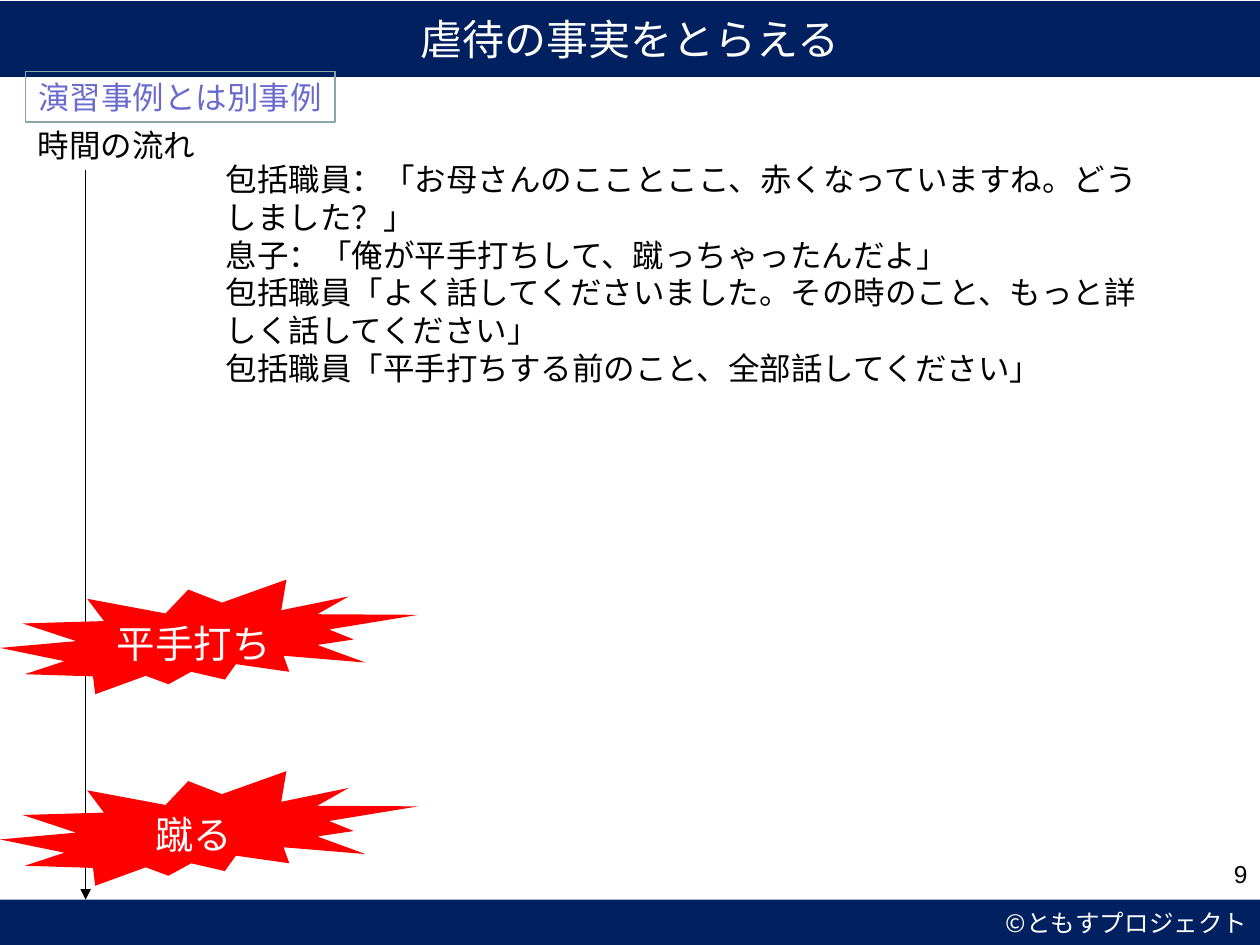
from dataclasses import dataclass

from lxml import etree
from pptx import Presentation
from pptx.dml.color import RGBColor
from pptx.enum.shapes import MSO_CONNECTOR, MSO_SHAPE
from pptx.enum.text import MSO_ANCHOR, MSO_AUTO_SIZE, PP_ALIGN
from pptx.oxml.ns import qn
from pptx.util import Inches, Pt

LEFT, MID, RIGHT = PP_ALIGN.LEFT, PP_ALIGN.CENTER, PP_ALIGN.RIGHT
TOP, CENTER = MSO_ANCHOR.TOP, MSO_ANCHOR.MIDDLE
RECT, BURST = MSO_SHAPE.RECTANGLE, MSO_SHAPE.EXPLOSION2
STRAIGHT = MSO_CONNECTOR.STRAIGHT
FIXED = MSO_AUTO_SIZE.NONE
COLS, ROWS = 100, 75


@dataclass
class Theme:
    navy: str = "002060"
    red: str = "FF0000"
    white: str = "FFFFFF"
    black: str = "000000"
    violet: str = "6B6BCF"
    frame: str = "8AA6A8"
    head: int = 24
    event: int = 22
    text: int = 18
    small: int = 14
    hair: float = 0.75
    pitch: float = 1.2
    asian: str = "Noto Sans CJK JP"
    latin: str = "Arial"
    label: str = "Calibri"


class Page:
    def __init__(self, deck, theme):
        self.theme = theme
        self.slide = deck.slides.add_slide(deck.slide_layouts[1])
        self.col = deck.slide_width / COLS
        self.row = deck.slide_height / ROWS

    def place(self, x, y, w, h):
        return (round(x * self.col), round(y * self.row),
                round(w * self.col), round(h * self.row))

    def move(self, shape, box):
        shape.left, shape.top, shape.width, shape.height = self.place(*box)

    def style(self, shape, lines, size, color, align=LEFT, anchor=TOP, font=None):
        """Set the lines of a shape and format them."""
        frame = shape.text_frame
        frame.text = "\n".join(lines)
        frame.word_wrap = True
        frame.auto_size = FIXED
        frame.vertical_anchor = anchor
        for para in frame.paragraphs:
            para.alignment = align
            para.space_before = Pt(0)
            para.line_spacing = Pt(size * self.theme.pitch)
            for run in para.runs:
                run.font.size = Pt(size)
                run.font.name = font or self.theme.asian
                run.font.color.rgb = RGBColor.from_string(color)
                east = etree.SubElement(run.font._element, qn("a:ea"))
                east.set("typeface", self.theme.asian)

    def paint(self, shape, fill):
        shape.fill.solid()
        shape.fill.fore_color.rgb = RGBColor.from_string(fill)
        shape.line.fill.background()

    def title(self, box, text):
        shape = self.slide.shapes.title
        self.move(shape, box)
        self.paint(shape, self.theme.navy)
        self.style(shape, [text], self.theme.head, self.theme.white, MID, CENTER)

    def body(self, box, lines):
        shape = self.slide.placeholders[1]
        self.move(shape, box)
        self.style(shape, lines, self.theme.text, self.theme.black)
        for para in shape.text_frame.paragraphs:
            props = para._p.get_or_add_pPr()
            props.set("marL", "0")
            props.set("indent", "0")
            etree.SubElement(props, qn("a:buNone"))

    def text(self, box, text, size, align=LEFT, font=None):
        shape = self.slide.shapes.add_textbox(*self.place(*box))
        self.style(shape, [text], size, self.theme.black, align, font=font)

    def shape(self, kind, box, text, size, color, fill=None, line=None,
              align=MID, anchor=TOP, font=None):
        shape = self.slide.shapes.add_shape(kind, *self.place(*box))
        shape.shadow.inherit = False
        if fill:
            self.paint(shape, fill)
        else:
            shape.fill.background()
        if line:
            shape.line.color.rgb = RGBColor.from_string(line)
            shape.line.width = Pt(self.theme.hair)
        self.style(shape, [text], size, color, align, anchor, font)

    def arrow(self, x, top, end):
        ends = self.place(x, top, x, end)
        line = self.slide.shapes.add_connector(STRAIGHT, *ends)
        line.line.color.rgb = RGBColor.from_string(self.theme.black)
        line.line.width = Pt(self.theme.hair)
        tip = etree.SubElement(line.line._get_or_add_ln(), qn("a:tailEnd"))
        tip.set("type", "triangle")
        etree.SubElement(line._element.spPr, qn("a:effectLst"))


def main():
    deck = Presentation()
    deck.slide_width, deck.slide_height = Inches(10), Inches(7.5)
    theme = Theme()
    page = Page(deck, theme)

    page.title((0, 0.1, COLS, 6), "虐待の事実をとらえる")
    page.body((16.9, 12.2, 76.3, 19), [
        "包括職員：「お母さんのこことここ、赤くなっていますね。どうしました？」",
        "息子：「俺が平手打ちして、蹴っちゃったんだよ」",
        "包括職員「よく話してくださいました。その時のこと、もっと詳しく話してください」",
        "包括職員「平手打ちする前のこと、全部話してください」",
    ])
    page.text((2, 9.5, 16.8, 4), "時間の流れ", theme.text, font=theme.label)
    foot = 71.4
    page.shape(RECT, (0, foot, COLS, ROWS - foot), "©ともすプロジェクト",
               theme.small, theme.white, theme.navy, align=RIGHT, anchor=CENTER)
    page.arrow(6.8, 13.5, foot)
    for top, event in ((46, "平手打ち"), (61.2, "蹴る")):
        page.shape(BURST, (0, top, 33.2, 9.1), event, theme.event,
                   theme.white, theme.red, font=theme.latin)
    page.text((76.7, 67.7, 23.3, 5.2), "9", theme.small, RIGHT, theme.latin)
    page.shape(RECT, (2, 5.7, 24.6, 4), "演習事例とは別事例", theme.text,
               theme.violet, line=theme.frame)

    deck.save("out.pptx")


if __name__ == "__main__":
    main()
